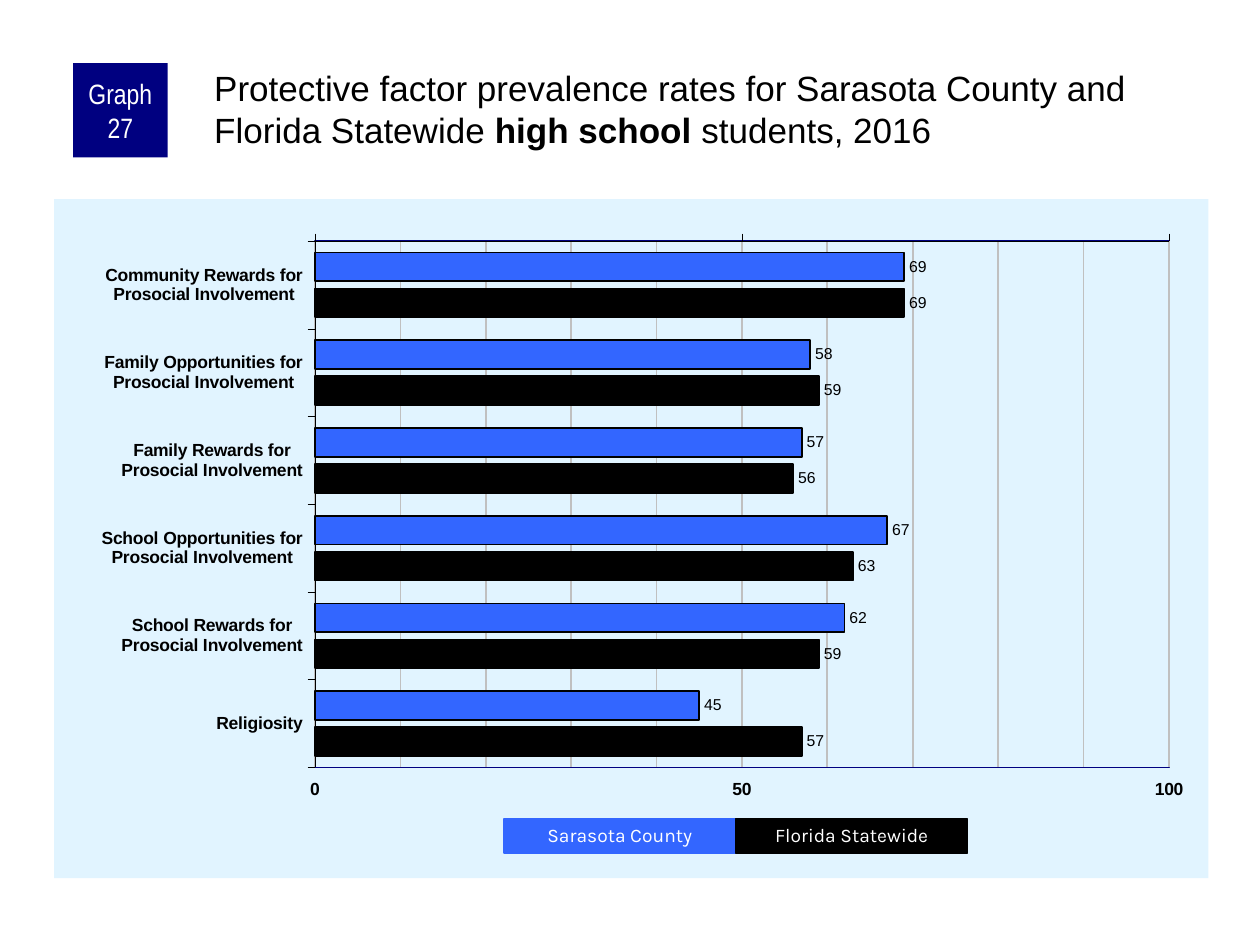
from copy import deepcopy
from dataclasses import dataclass

from pptx import Presentation
from pptx import util as u
from pptx.chart.data import CategoryChartData
from pptx.dml.color import RGBColor
from pptx.enum import chart as ch, shapes, text
from pptx.oxml import parse_xml
from pptx.oxml.ns import nsdecls, qn


@dataclass(frozen=True)
class Theme:
    """Colours, fonts and type sizes of the slide."""
    navy: str = "000080"
    blue: str = "3366FF"
    black: str = "000000"
    white: str = "FFFFFF"
    panel: str = "E1F4FF"
    grid: str = "C0C0C0"
    body: str = "Arial"
    narrow: str = "Arial Narrow"
    key: str = "Karla"
    title_size: float = 20
    badge_size: float = 16
    key_size: float = 11
    axis_size: float = 10
    value_size: float = 9


THEME = Theme()
FACTORS = [
    ("Community Rewards for\nProsocial Involvement", 69, 69),
    ("Family Opportunities for\nProsocial Involvement", 58, 59),
    ("Family Rewards for\nProsocial Involvement", 57, 56),
    ("School Opportunities for\nProsocial Involvement", 67, 63),
    ("School Rewards for\nProsocial Involvement", 62, 59),
    ("Religiosity", 45, 57),
]
REGIONS = [("Sarasota County", THEME.blue), ("Florida Statewide", THEME.black)]


def set_font(font, face, size, color, bold=False):
    """Apply face, size, colour and weight to a font."""
    font.name, font.size, font.bold = face, u.Pt(size), bold
    font.color.rgb = RGBColor.from_string(color)


def set_line(line, color, width):
    """Give a line a solid colour and a width in points."""
    line.color.rgb = RGBColor.from_string(color)
    line.width = u.Pt(width)


def add_label_box(slide, box, words, fill, face, size, spacing=1.0):
    """Add a filled rectangle with centred white text."""
    label = slide.shapes.add_shape(shapes.MSO_SHAPE.RECTANGLE, *map(u.Inches, box))
    label.shadow.inherit = False
    label.fill.solid()
    label.fill.fore_color.rgb = RGBColor.from_string(fill)
    label.line.fill.background()
    frame = label.text_frame
    frame.word_wrap = True
    frame.vertical_anchor = text.MSO_ANCHOR.MIDDLE
    frame.margin_left = frame.margin_right = u.Inches(0.05)
    frame.margin_top = frame.margin_bottom = 0
    paragraph = frame.paragraphs[0]
    paragraph.text = words
    paragraph.alignment = text.PP_ALIGN.CENTER
    paragraph.line_spacing = spacing
    set_font(paragraph.font, face, size, THEME.white)
    return label


def add_title(slide, box, runs):
    """Add the title from (words, bold) runs."""
    frame = slide.shapes.add_textbox(*map(u.Inches, box)).text_frame
    frame.word_wrap = True
    frame.margin_left = frame.margin_top = u.Inches(0.03)
    frame.margin_right = frame.margin_bottom = 0
    for words, bold in runs:
        run = frame.paragraphs[0].add_run()
        run.text = words
        set_font(run.font, THEME.body, THEME.title_size, THEME.black, bold)


def style_axes(chart):
    """Set the scale, grid, ticks and type of both axes."""
    factors, rates = chart.category_axis, chart.value_axis
    for axis in (factors, rates):
        axis.major_tick_mark = ch.XL_TICK_MARK.OUTSIDE
        axis.minor_tick_mark = ch.XL_TICK_MARK.NONE
        set_font(axis.tick_labels.font, THEME.body, THEME.axis_size, THEME.black, True)
        set_line(axis.format.line, THEME.black, 0.25)
    factors.reverse_order = True
    rates.tick_label_position = ch.XL_TICK_LABEL_POSITION.HIGH
    rates.minimum_scale, rates.maximum_scale = 0, 100
    rates.major_unit, rates.minor_unit = 50, 10
    rates.has_major_gridlines = rates.has_minor_gridlines = True
    set_line(rates.major_gridlines.format.line, THEME.grid, 1)
    value_xml = rates._element
    grid_style = value_xml.find(qn("c:majorGridlines")).find(qn("c:spPr"))
    value_xml.find(qn("c:minorGridlines")).append(deepcopy(grid_style))


def style_areas(chart, x, y, width, height):
    """Fill the chart area, place the plot area and outline it."""
    chart_xml = chart._chartSpace.find(qn("c:chart"))
    chart_xml.addnext(parse_xml(
        f'<c:spPr {nsdecls("c", "a")}><a:solidFill><a:srgbClr val="{THEME.panel}"/>'
        '</a:solidFill><a:ln><a:noFill/></a:ln></c:spPr>'))
    plot_xml = chart_xml.find(qn("c:plotArea"))
    for layout in plot_xml.findall(qn("c:layout")):
        plot_xml.remove(layout)
    plot_xml.insert(0, parse_xml(
        f'<c:layout {nsdecls("c")}><c:manualLayout><c:layoutTarget val="inner"/>'
        '<c:xMode val="edge"/><c:yMode val="edge"/>'
        f'<c:x val="{x}"/><c:y val="{y}"/><c:w val="{width}"/><c:h val="{height}"/>'
        '</c:manualLayout></c:layout>'))
    plot_xml.append(parse_xml(
        f'<c:spPr {nsdecls("c", "a")}><a:noFill/><a:ln w="12700"><a:solidFill>'
        f'<a:srgbClr val="{THEME.navy}"/></a:solidFill></a:ln></c:spPr>'))


def add_rates_chart(slide, box):
    """Add the clustered bars that compare the regions."""
    names, *rates = zip(*FACTORS)
    data = CategoryChartData()
    data.categories = names
    for (region, _), values in zip(REGIONS, rates):
        data.add_series(region, values)
    chart = slide.shapes.add_chart(
        ch.XL_CHART_TYPE.BAR_CLUSTERED, *map(u.Inches, box), data).chart
    chart.has_legend = chart.has_title = False
    set_font(chart.font, THEME.body, THEME.axis_size, THEME.black)
    bars = chart.plots[0]
    bars.gap_width, bars.overlap, bars.vary_by_categories = 80, -25, False
    for series, (_, color) in zip(bars.series, REGIONS):
        series.format.fill.solid()
        series.format.fill.fore_color.rgb = RGBColor.from_string(color)
        set_line(series.format.line, THEME.black, 1)
        labels = series.data_labels
        labels.show_value = True
        labels.position = ch.XL_LABEL_POSITION.OUTSIDE_END
        set_font(labels.font, THEME.body, THEME.value_size, THEME.black)
    style_axes(chart)
    style_areas(chart, 0.226, 0.062, 0.74, 0.775)


def add_key(slide, left, top, width, height):
    """Add one coloured label per region, side by side."""
    for index, (region, color) in enumerate(REGIONS):
        box = (left + index * width, top, width, height)
        label = add_label_box(slide, box, region, color, THEME.key, THEME.key_size, 0.9)
        set_line(label.line, color, 0.75)


def main():
    """Build the slide and save it."""
    deck = Presentation()
    deck.slide_width, deck.slide_height = u.Inches(10), u.Inches(7.5)
    slide = deck.slides.add_slide(deck.slide_layouts[6])
    add_rates_chart(slide, (0.43, 1.58, 9.16, 5.39))
    add_label_box(slide, (0.58, 0.5, 0.75, 0.75), "Graph 27",
                  THEME.navy, THEME.narrow, THEME.badge_size)
    add_title(slide, (1.67, 0.5, 7.92, 0.83), [
        ("Protective factor prevalence rates for Sarasota County and Florida Statewide ", False),
        ("high school ", True),
        ("students, 2016", False),
    ])
    add_key(slide, 4, 6.5, 1.84, 0.27)
    deck.save("out.pptx")


if __name__ == "__main__":
    main()
